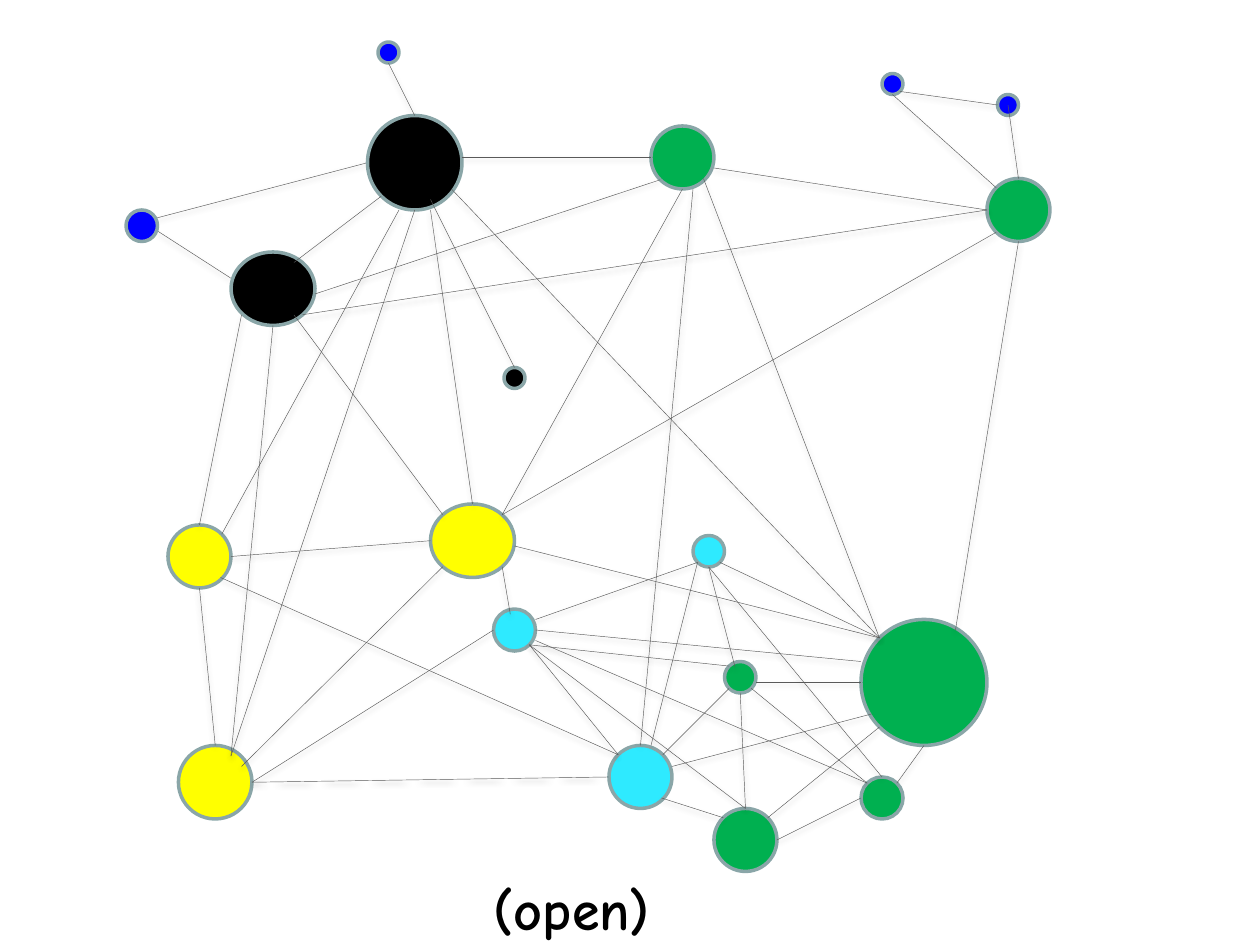
"""Build a slide with a network of coloured nodes and thin links."""
import math

import lxml.etree
import pptx
import pptx.dml.color
import pptx.enum.shapes
import pptx.oxml.ns
import pptx.util

COLOURS = {
    "green": "00B050", "yellow": "FFFF00", "black": "000000", "cyan": "2EEAFF",
    "blue": "0000FF", "rim": "8AA6A8", "link": "595959",
}
UNITS_PER_INCH = 12
NODES = {
    "hub": ("green", 82, 59, 12, 12),
    "yellow_mid": ("yellow", 41, 48, 8, 7),
    "green_top": ("green", 62, 12, 6, 6),
    "green_right": ("green", 94, 17, 6, 6),
    "black_left": ("black", 22, 24, 8, 7),
    "black_top": ("black", 35, 11, 9, 9),
    "yellow_low": ("yellow", 17, 71, 7, 7),
    "yellow_left": ("yellow", 16, 50, 6, 6),
    "green_low": ("green", 68, 77, 6, 6),
    "cyan_low": ("cyan", 58, 71, 6, 6),
    "green_small": ("green", 82, 74, 4, 4),
    "cyan_mid": ("cyan", 47, 58, 4, 4),
    "blue_left": ("blue", 12, 20, 3, 3),
    "blue_top": ("blue", 36, 4, 2, 2),
    "green_mid": ("green", 69, 63, 3, 3),
    "cyan_top": ("cyan", 66, 51, 3, 3),
    "black_dot": ("black", 48, 35, 2, 2),
    "blue_far": ("blue", 95, 9, 2, 2),
    "blue_near": ("blue", 84, 7, 2, 2),
}
ANGLES = {"E": 0, "SE": 45, "S": 90, "SW": 135, "W": 180, "NW": 225, "N": 270, "NE": 315}
LINKS_BELOW = [
    ((14, 21), ("black_top", "W")),
    ((15, 22), (22, 26.5)),
]
LINKS_ABOVE = [
    ((44, 15), ("green_top", "W")),
    ((28, 25), ("black_top", "SW")),
    ((28, 30), ("yellow_mid", "NW")),
    ((23, 30), ("yellow_left", "N")),
    (("yellow_left", "E"), ("yellow_mid", "W")),
    ((41, 20), ("yellow_mid", "N")),
    ((38, 20), ("yellow_left", "NE")),
    (("green_top", "S"), ("yellow_mid", "NE")),
    ((66, 18), ("cyan_low", "N")),
    ((21, 55), ("cyan_low", "NW")),
    (("yellow_low", "E"), ("cyan_low", "W")),
    (("yellow_left", "S"), ("yellow_low", "N")),
    ((68, 16), ("green_right", "W")),
    (("yellow_mid", "NE"), ("green_right", "SW")),
    ((67, 17), ("hub", "NW")),
    (("green_low", "NE"), ("hub", "SW")),
    ((63, 76), ("green_low", "NW")),
    ((64, 73), (83, 68)),
    ((43, 18), ("hub", "NW")),
    (("green_right", "S"), (91, 60)),
    ((49, 52), ("hub", "NW")),
    (("green_small", "NE"), ("hub", "S")),
    (("green_low", "E"), ("green_small", "W")),
    ((30, 28), ("green_top", "SW")),
    (("black_left", "SE"), ("green_right", "W")),
    (("black_left", "S"), (22, 72)),
    (("blue_top", "S"), ("black_top", "N")),
    (("yellow_mid", "SE"), (48.6, 58.5)),
    ((72, 65), ("hub", "W")),
    (("cyan_mid", "SE"), ("cyan_low", "NW")),
    (("green_mid", "S"), ("green_low", "N")),
    (("cyan_low", "NE"), ("green_mid", "SW")),
    (("green_mid", "SE"), ("green_small", "NW")),
    (("cyan_mid", "E"), (82, 63)),
    ((23, 73), ("yellow_mid", "SW")),
    ((22, 72), ("black_top", "S")),
    (("yellow_low", "E"), ("cyan_mid", "W")),
    (("cyan_top", "SE"), ("hub", "NW")),
    ((41, 19), ("black_dot", "N")),
    (("cyan_top", "S"), ("green_small", "N")),
    (("cyan_top", "S"), (70, 63.5)),
    ((62, 71), ("cyan_top", "SW")),
    ((96, 10), ("green_right", "N")),
    (("blue_near", "SE"), ("blue_far", "W")),
    (("blue_near", "S"), ("green_right", "NW")),
    ((51, 59), ("cyan_top", "SW")),
    (("cyan_mid", "SE"), ("green_mid", "NW")),
    ((51, 61), ("green_small", "NW")),
    (("cyan_mid", "SE"), ("green_low", "N")),
]
CAPTION = "(open)"
CAPTION_AREA = (3.58, 6.89, 6.42, 0.64)
CAPTION_FONT = {"name": "Comic Neue", "size": pptx.util.Pt(32), "bold": True}
CAPTION_FRAME = {"word_wrap": True, "margin_left": pptx.util.Inches(0.34)}
SHADOW = {"blurRad": 3.1, "dist": 1.6}


def colour(name):
    return pptx.dml.color.RGBColor.from_string(COLOURS[name])


def units(*values):
    return [pptx.util.Inches(value / UNITS_PER_INCH) for value in values]


def locate(end):
    if end[0] not in NODES:
        return end
    _, left, top, width, height = NODES[end[0]]
    angle = math.radians(ANGLES[end[1]])
    return (left + width / 2 * (1 + math.cos(angle)),
            top + height / 2 * (1 + math.sin(angle)))


def add_shadow(connector):
    tag = pptx.oxml.ns.qn
    properties = connector.element.find(tag("p:spPr"))
    effects = lxml.etree.SubElement(properties, tag("a:effectLst"))
    shadow = lxml.etree.SubElement(effects, tag("a:outerShdw"), dir="5400000", rotWithShape="0")
    for name, points in SHADOW.items():
        shadow.set(name, str(int(pptx.util.Pt(points))))
    tint = lxml.etree.SubElement(shadow, tag("a:srgbClr"), val=COLOURS["black"])
    lxml.etree.SubElement(tint, tag("a:alpha"), val="38000")


def add_links(page, links):
    for start, finish in links:
        connector = page.shapes.add_connector(
            pptx.enum.shapes.MSO_CONNECTOR.STRAIGHT, *units(*locate(start), *locate(finish)))
        connector.line.color.rgb = colour("link")
        connector.line.width = pptx.util.Pt(0.25)
        add_shadow(connector)


def add_nodes(page):
    for fill, *area in NODES.values():
        node = page.shapes.add_shape(pptx.enum.shapes.MSO_SHAPE.OVAL, *units(*area))
        node.shadow.inherit = False
        node.fill.solid()
        node.fill.fore_color.rgb = colour(fill)
        node.line.color.rgb = colour("rim")
        node.line.width = pptx.util.Pt(2)


def add_caption(page):
    box = page.shapes.add_textbox(*map(pptx.util.Inches, CAPTION_AREA))
    for name, value in CAPTION_FRAME.items():
        setattr(box.text_frame, name, value)
    span = box.text_frame.paragraphs[0].add_run()
    span.text = CAPTION
    for name, value in CAPTION_FONT.items():
        setattr(span.font, name, value)
    span.font.color.rgb = colour("black")


def main():
    deck = pptx.Presentation()
    deck.slide_width = pptx.util.Inches(10)
    deck.slide_height = pptx.util.Inches(7.5)
    page = deck.slides.add_slide(deck.slide_layouts[6])
    add_links(page, LINKS_BELOW)
    add_nodes(page)
    add_links(page, LINKS_ABOVE)
    add_caption(page)
    deck.save("out.pptx")


if __name__ == "__main__":
    main()
